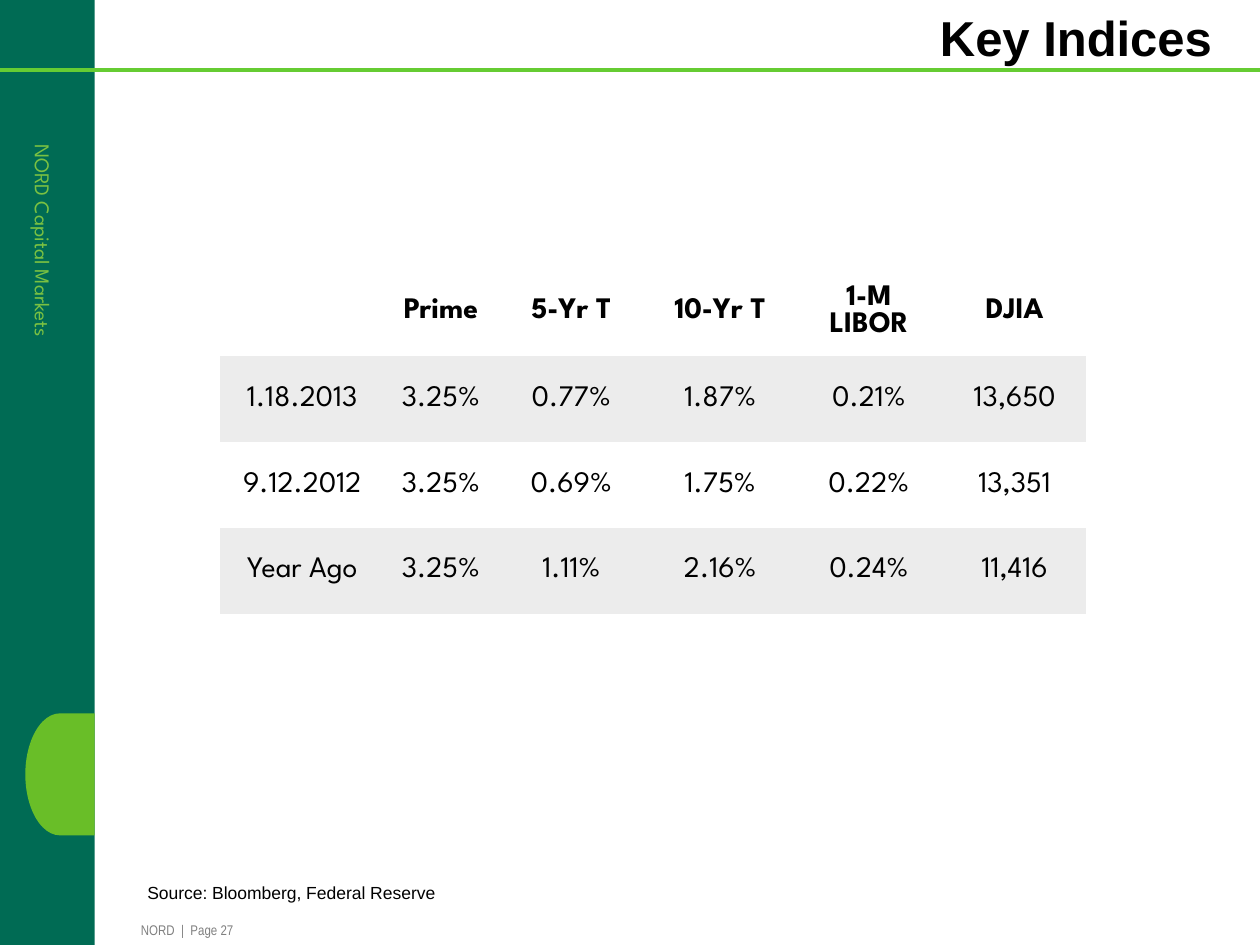
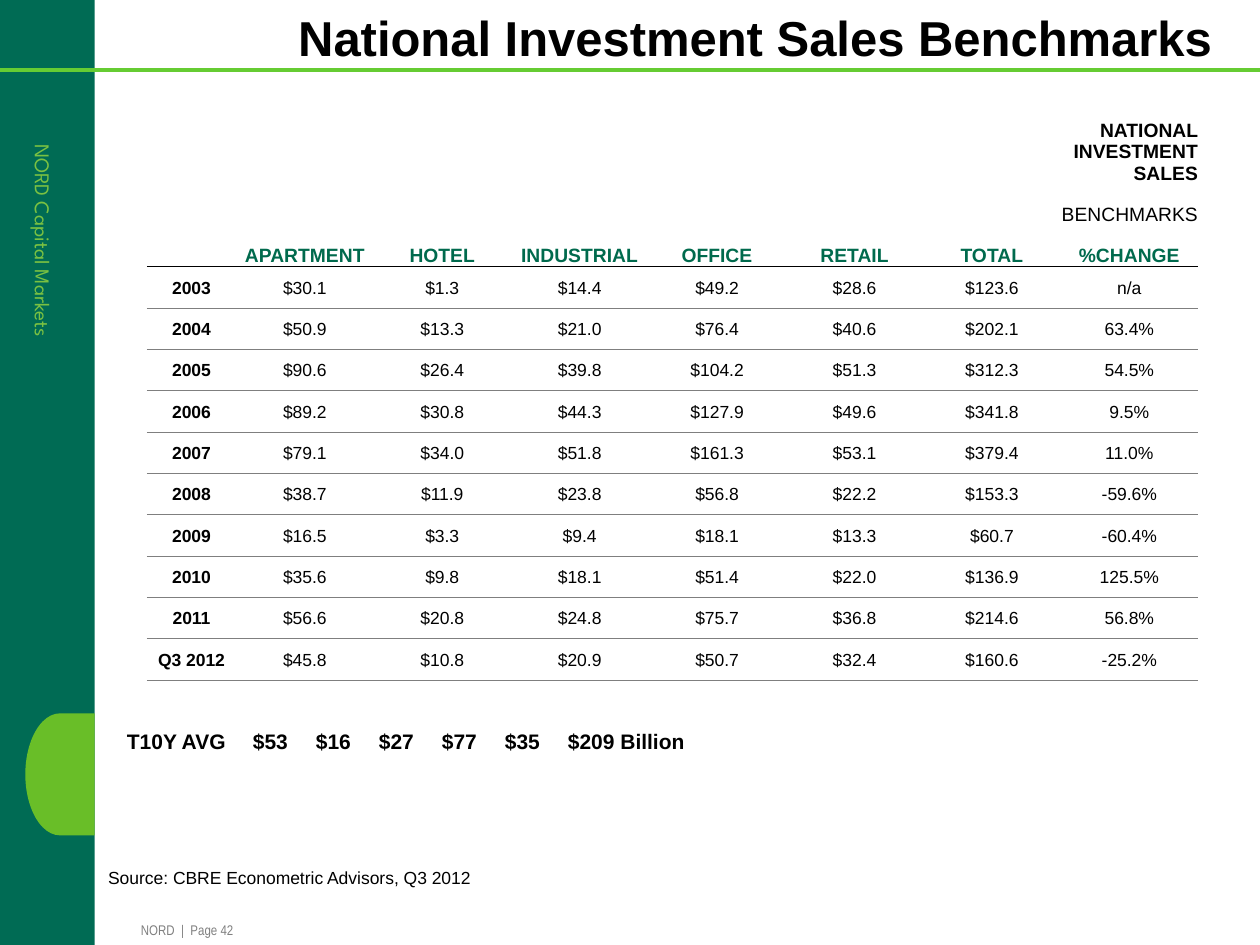
from pptx import Presentation
from pptx.dml.color import RGBColor
from pptx.enum.shapes import MSO_CONNECTOR, MSO_SHAPE
from pptx.enum.text import MSO_ANCHOR as Anchor, MSO_AUTO_SIZE as AutoSize, PP_ALIGN as Align
from pptx.oxml.ns import qn
from pptx.util import Cm, Pt
from lxml.etree import SubElement

BLACK, GREY, WHITE = "000000", "808080", "FFFFFF"
SIDEBAR_GREEN, HEADER_GREEN = "006B54", "006A4D"
LINE_GREEN, LABEL_GREEN, ACCENT_GREEN = "66CC33", "7AC142", "69BE28"
BAND_GREY, RULE_GREY = "ECECEC", "7F7F7F"
SANS, NARROW, DISPLAY = "Arial", "Arial Narrow", "League Spartan"
PLAIN_TABLE_STYLE = "{2D5ABB26-0587-4C30-8999-92F81FD0307C}"
TITLE_ONLY = 5
NO_INSETS = (0, 0, 0, 0)
BOX_INSETS = (0.25, 0.13, 0.25, 0.13)


def color(hex_value):
    return RGBColor.from_string(hex_value)


def lengths(values):
    return [Cm(value) for value in values]


def set_insets(target, insets):
    """Set left, top, right and bottom margins of a text frame or cell."""
    (target.margin_left, target.margin_top,
     target.margin_right, target.margin_bottom) = lengths(insets)


def format_text(paragraph, size, font=SANS, ink=BLACK, bold=False, align=Align.LEFT):
    paragraph.alignment = align
    for run in paragraph.runs:
        run.font.name, run.font.size, run.font.bold = font, Pt(size), bold
        run.font.color.rgb = color(ink)


class Deck:
    def __init__(self):
        self.presentation = Presentation()
        self.presentation.slide_width = Cm(25.4)
        self.presentation.slide_height = Cm(19.05)
        self.slide = None

    def add_slide(self, title, page):
        layout = self.presentation.slide_layouts[TITLE_ONLY]
        self.slide = self.presentation.slides.add_slide(layout)
        self.shape(MSO_SHAPE.RECTANGLE, (0, 0, 1.91, 19.05), SIDEBAR_GREEN)
        footer = self.shape(MSO_SHAPE.RECTANGLE, (2.84, 18.57, 3.76, 0.43), WHITE)
        self.fill_frame(footer, f"NORD  |  Page {page}", 8, NO_INSETS, font=NARROW, ink=GREY)
        self.line(1.42)
        label = self.text((-0.97, 4.57, 3.76, 0.43), "NORD Capital Markets", 12,
                          NO_INSETS, wrap=False, font=DISPLAY, ink=LABEL_GREEN)
        label.rotation = 90
        accent = self.shape(MSO_SHAPE.FLOWCHART_DELAY, (0.51, 14.38, 1.4, 2.46), ACCENT_GREEN)
        accent.rotation = 180
        self.title(title)

    def title(self, text):
        title = self.slide.shapes.title
        title.left, title.top, title.width, title.height = lengths((2.84, 0.15, 21.59, 1.19))
        self.fill_frame(title, text, 28, NO_INSETS, anchor=Anchor.BOTTOM,
                        bold=True, align=Align.RIGHT)

    def fill_frame(self, shape, text, size, insets=BOX_INSETS, wrap=True,
                   anchor=Anchor.TOP, **style):
        frame = shape.text_frame
        frame.text = text
        frame.word_wrap = wrap
        frame.auto_size = AutoSize.NONE
        frame.vertical_anchor = anchor
        set_insets(frame, insets)
        format_text(frame.paragraphs[0], size, **style)

    def shape(self, kind, box, fill):
        shape = self.slide.shapes.add_shape(kind, *lengths(box))
        shape.shadow.inherit = False
        shape.fill.solid()
        shape.fill.fore_color.rgb = color(fill)
        shape.line.fill.background()
        return shape

    def line(self, top):
        """Draw the green rule across the whole slide."""
        line = self.slide.shapes.add_connector(
            MSO_CONNECTOR.STRAIGHT, 0, Cm(top), self.presentation.slide_width, Cm(top))
        line.line.color.rgb = color(LINE_GREEN)
        line.line.width = Pt(2.25)
        SubElement(line._element.spPr, qn("a:effectLst"))

    def text(self, box, text, size, insets=BOX_INSETS, wrap=True, **style):
        shape = self.slide.shapes.add_textbox(*lengths(box))
        self.fill_frame(shape, text, size, insets, wrap, **style)
        return shape

    def tabbed_text(self, box, entries, stops, size, **style):
        shape = self.slide.shapes.add_textbox(*lengths(box))
        properties = shape.text_frame.paragraphs[0]._p.get_or_add_pPr()
        tab_list = SubElement(properties, qn("a:tabLst"))
        for stop in stops:
            SubElement(tab_list, qn("a:tab"), pos=str(Cm(stop)), algn="l")
        self.fill_frame(shape, "\t".join(entries), size, **style)

    def table(self, left, top, widths, heights):
        frame = self.slide.shapes.add_table(
            len(heights), len(widths), Cm(left), Cm(top), Cm(sum(widths)), Cm(sum(heights)))
        table = frame.table
        table._tbl.tblPr.find(qn("a:tableStyleId")).text = PLAIN_TABLE_STYLE
        table.first_row = table.horz_banding = False
        for column, width in zip(table.columns, widths):
            column.width = Cm(width)
        for row, height in zip(table.rows, heights):
            row.height = Cm(height)
        return table

    def cell(self, cell, text, size, insets, fill=None, rule=None,
             anchor=Anchor.MIDDLE, align=Align.CENTER, **style):
        cell.text = text
        cell.vertical_anchor = anchor
        set_insets(cell, insets)
        format_text(cell.text_frame.paragraphs[0], size, align=align, **style)
        if rule:
            border = SubElement(cell._tc.get_or_add_tcPr(), qn("a:lnB"), w=str(Pt(0.5)))
            SubElement(SubElement(border, qn("a:solidFill")), qn("a:srgbClr"), val=rule)
        if fill:
            cell.fill.solid()
            cell.fill.fore_color.rgb = color(fill)
        else:
            cell.fill.background()


def add_key_indices(deck):
    deck.add_slide("Key Indices", 27)
    deck.text((2.72, 17.65, 6.3, 0.69), "Source: Bloomberg, Federal Reserve", 10, wrap=False)
    rows = [
        ("", "Prime", "5-Yr T", "10-Yr T", "1-M LIBOR", "DJIA"),
        ("1.18.2013", "3.25%", "0.77%", "1.87%", "0.21%", "13,650"),
        ("9.12.2012", "3.25%", "0.69%", "1.75%", "0.22%", "13,351"),
        ("Year Ago", "3.25%", "1.11%", "2.16%", "0.24%", "11,416"),
    ]
    table = deck.table(4.43, 5.38, [3.33, 2.26, 3, 3, 3, 2.87], [1.8] + [1.73] * 3)
    for r, row in enumerate(rows):
        for c, text in enumerate(row):
            deck.cell(table.cell(r, c), text, 17, (0.23, 0.13, 0.23, 0.13),
                      fill=BAND_GREY if r % 2 else None, font=DISPLAY, bold=r == 0)


def add_sales_benchmarks(deck):
    deck.add_slide("National Investment Sales Benchmarks", 42)
    deck.text((2.18, 17.48, 8.64, 0.56), "Source: CBRE Econometric Advisors, Q3 2012", 10,
              (0, 0, 0, 0.13))
    headings = ["NATIONAL INVESTMENT SALES", "BENCHMARKS"]
    sectors = ("", "APARTMENT", "HOTEL", "INDUSTRIAL", "OFFICE", "RETAIL", "TOTAL", "%CHANGE")
    sales = [
        ("2003", "$30.1", "$1.3", "$14.4", "$49.2", "$28.6", "$123.6", "n/a"),
        ("2004", "$50.9", "$13.3", "$21.0", "$76.4", "$40.6", "$202.1", "63.4%"),
        ("2005", "$90.6", "$26.4", "$39.8", "$104.2", "$51.3", "$312.3", "54.5%"),
        ("2006", "$89.2", "$30.8", "$44.3", "$127.9", "$49.6", "$341.8", "9.5%"),
        ("2007", "$79.1", "$34.0", "$51.8", "$161.3", "$53.1", "$379.4", "11.0%"),
        ("2008", "$38.7", "$11.9", "$23.8", "$56.8", "$22.2", "$153.3", "-59.6%"),
        ("2009", "$16.5", "$3.3", "$9.4", "$18.1", "$13.3", "$60.7", "-60.4%"),
        ("2010", "$35.6", "$9.8", "$18.1", "$51.4", "$22.0", "$136.9", "125.5%"),
        ("2011", "$56.6", "$20.8", "$24.8", "$75.7", "$36.8", "$214.6", "56.8%"),
        ("Q3 2012", "$45.8", "$10.8", "$20.9", "$50.7", "$32.4", "$160.6", "-25.2%"),
    ]
    last = len(sectors) - 1
    table = deck.table(2.96, 2.01, [1.8] + [2.77] * last, [1.7] + [10 / 12] * 12)
    for r, heading in enumerate(headings):
        for c in range(len(sectors)):
            deck.cell(table.cell(r, c), heading if c == last else "", 11, NO_INSETS,
                      anchor=Anchor.BOTTOM, align=Align.RIGHT, bold=r == 0)
    for c, sector in enumerate(sectors):
        deck.cell(table.cell(2, c), sector, 11, NO_INSETS, rule=BLACK,
                  anchor=Anchor.BOTTOM, ink=HEADER_GREEN, bold=True)
    for r, row in enumerate(sales, start=3):
        for c, text in enumerate(row):
            deck.cell(table.cell(r, c), text, 10, (0.03, 0.03, 0.03, 0),
                      rule=RULE_GREY, bold=c == 0)
    averages = ["T10Y AVG", "$53", "$16", "$27", "$77", "$35", "$209 Billion"]
    deck.tabbed_text((2.31, 14.55, 21.87, 0.76), averages,
                     [3.12, 5.89, 8.66, 11.56, 14.22, 16.43], 12, bold=True)


def main():
    deck = Deck()
    add_key_indices(deck)
    add_sales_benchmarks(deck)
    deck.presentation.save("out.pptx")


if __name__ == "__main__":
    main()
